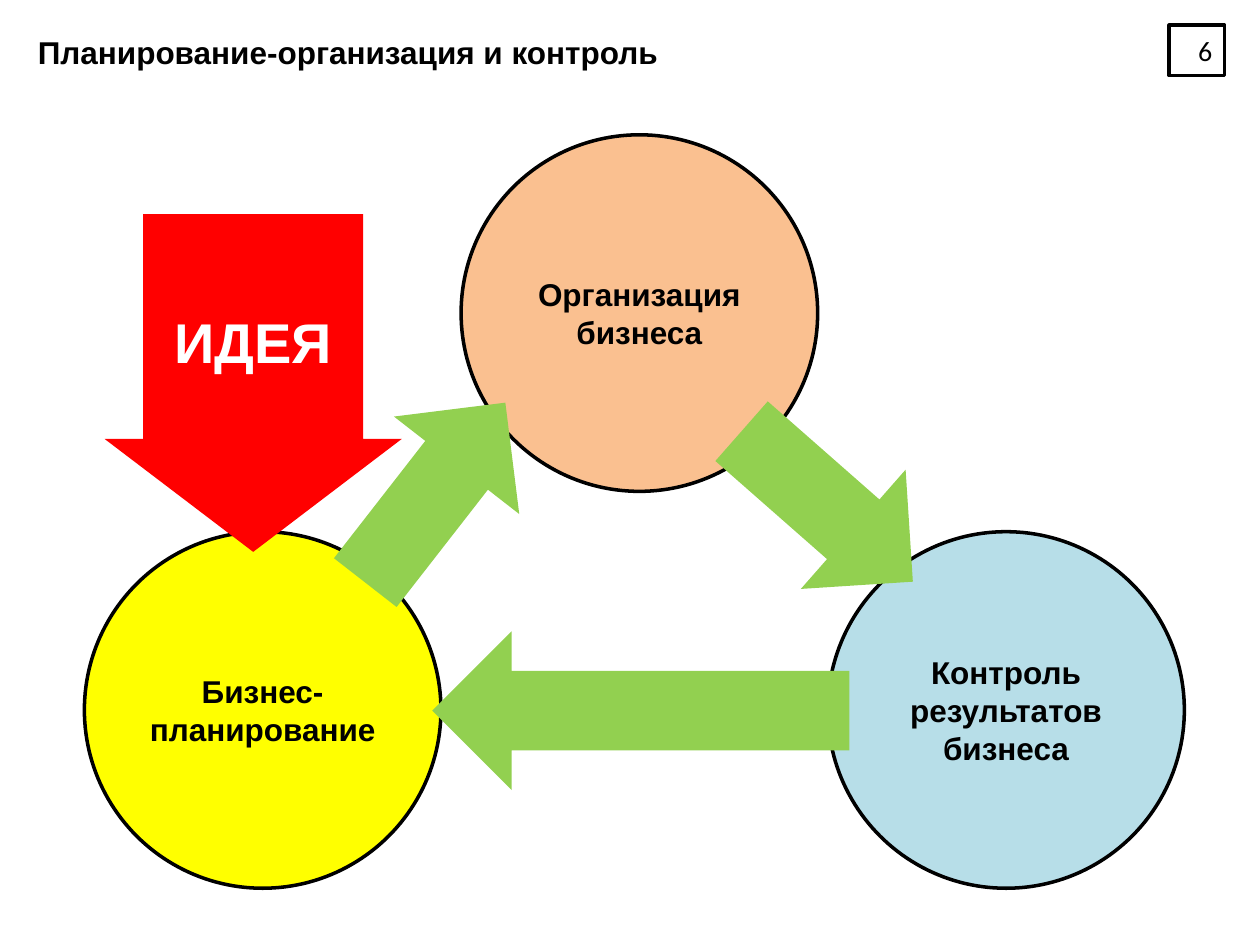
"""Build the slide on the planning, organising and control cycle."""
from dataclasses import dataclass

from pptx import Presentation
from pptx.dml.color import RGBColor
from pptx.enum.shapes import MSO_SHAPE
from pptx.enum.text import MSO_ANCHOR, PP_ALIGN
from pptx.util import Emu, Pt

PX = 9144
BLACK = RGBColor(0, 0, 0)
WHITE = RGBColor(255, 255, 255)
YELLOW = RGBColor(255, 255, 0)
PEACH = RGBColor(0xFA, 0xC0, 0x90)
BLUE = RGBColor(0xB7, 0xDE, 0xE8)
GREEN = RGBColor(0x92, 0xD0, 0x50)
RED = RGBColor(255, 0, 0)
RECT, OVAL = MSO_SHAPE.RECTANGLE, MSO_SHAPE.OVAL
RIGHT_ARROW, DOWN_ARROW = MSO_SHAPE.RIGHT_ARROW, MSO_SHAPE.DOWN_ARROW
LEFT, CENTER, RIGHT = PP_ALIGN.LEFT, PP_ALIGN.CENTER, PP_ALIGN.RIGHT
TOP, MIDDLE = MSO_ANCHOR.TOP, MSO_ANCHOR.MIDDLE
ROUND = 283
INSET = 4


@dataclass
class Stage:
    left: int
    top: int
    fill: RGBColor
    text: str


@dataclass
class Arrow:
    left: int
    top: int
    width: int
    turn: float


STAGES = [
    Stage(67, 422, YELLOW, "Бизнес-планирование"),
    Stage(366, 107, PEACH, "Организация\nбизнеса"),
    Stage(657, 422, BLUE, "Контроль\nрезультатов бизнеса"),
]
ARROWS = [
    Arrow(255, 328, 181, 307.9),
    Arrow(566, 339, 181, 41.3),
    Arrow(343, 501, 331, 180),
]


def px(size: int) -> Emu:
    """Turn px into EMU."""
    return Emu(size * PX)


def write(shape, text: str, size: int = 18, color: RGBColor = BLACK,
          align=CENTER, anchor=MIDDLE, font: str = "Arial", bold: bool = True) -> None:
    """Set and format the text of a shape."""
    frame = shape.text_frame
    frame.text = text
    frame.word_wrap = True
    frame.vertical_anchor = anchor
    for para in frame.paragraphs:
        para.alignment = align
        for run in para.runs:
            run.font.size = Pt(size)
            run.font.name = font
            run.font.bold = bold
            run.font.color.rgb = color


def draw(slide, kind, left: int, top: int, width: int, height: int,
         fill: RGBColor, edge: bool = False):
    """Add a flat shape, with a black edge if asked."""
    shape = slide.shapes.add_shape(kind, px(left), px(top), px(width), px(height))
    shape.shadow.inherit = False
    shape.fill.solid()
    shape.fill.fore_color.rgb = fill
    if edge:
        shape.line.color.rgb = BLACK
        shape.line.width = Pt(2)
    else:
        shape.line.fill.background()
    return shape


def add_stage(slide, stage: Stage) -> None:
    """Add one circle of the cycle."""
    shape = draw(slide, OVAL, stage.left, stage.top, ROUND, ROUND, stage.fill, True)
    write(shape, stage.text)
    frame = shape.text_frame
    frame.margin_left = frame.margin_right = px(INSET)
    frame.margin_top = frame.margin_bottom = px(INSET)


def add_arrow(slide, arrow: Arrow) -> None:
    """Add one green arrow between two circles."""
    shape = draw(slide, RIGHT_ARROW, arrow.left, arrow.top, arrow.width, 126, GREEN)
    shape.rotation = arrow.turn


def add_title(slide) -> None:
    """Place and format the title."""
    title = slide.shapes.title
    title.left, title.top = px(20), px(21)
    title.width, title.height = px(709), px(40)
    write(title, "Планирование-организация и контроль", align=LEFT, anchor=TOP)


def main() -> None:
    """Build and save the slide."""
    deck = Presentation()
    deck.slide_width, deck.slide_height = px(1000), px(750)
    slide = deck.slides.add_slide(deck.slide_layouts[5])
    add_title(slide)
    number = draw(slide, RECT, 928, 20, 44, 40, WHITE, True)
    write(number, "6", 16, align=RIGHT, font="Calibri", bold=False)
    for stage in STAGES:
        add_stage(slide, stage)
    for arrow in ARROWS:
        add_arrow(slide, arrow)
    idea = draw(slide, DOWN_ARROW, 83, 170, 236, 268, RED)
    idea.adjustments[0] = 0.74
    idea.adjustments[1] = 0.38
    write(idea, "ИДЕЯ", 32, WHITE)
    deck.save("out.pptx")


if __name__ == "__main__":
    main()
